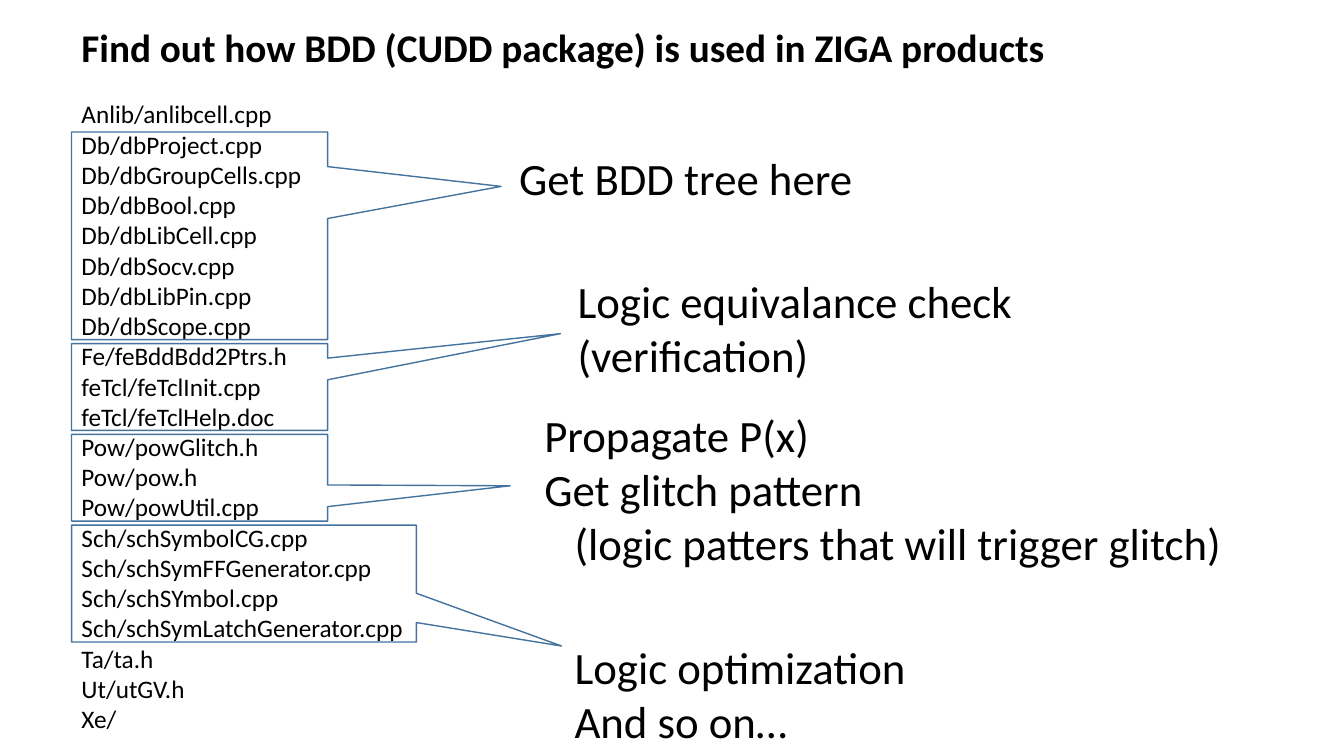
"""Build a slide linking source files to the ways they use the BDD package."""
from pptx import Presentation
from pptx import util as u
from pptx.dml.color import RGBColor
from pptx.enum import shapes, text

LEFT = 0.71
LIST_TOP = 1.01
ROW = 0.3
GAP = 0.04
INDENT = 0.3


def color(hex_string):
    return RGBColor.from_string(hex_string)


def add_text(slide, box, lines, size, bold=False):
    shape = slide.shapes.add_textbox(*[u.Inches(length) for length in box])
    frame = shape.text_frame
    frame.word_wrap = False
    frame.auto_size = text.MSO_AUTO_SIZE.SHAPE_TO_FIT_TEXT
    frame.text = "\n".join(lines)
    for paragraph in frame.paragraphs:
        paragraph.font.name = "Calibri"
        paragraph.font.size = u.Pt(size)
        paragraph.font.bold = bold
        paragraph.font.color.rgb = color("000000")
    return frame


presentation = Presentation()
presentation.slide_width = u.Inches(13.33)
presentation.slide_height = u.Inches(7.5)
slide = presentation.slides.add_slide(presentation.slide_layouts[6])

files = [
    "Anlib/anlibcell.cpp",
    "Db/dbProject.cpp",
    "Db/dbGroupCells.cpp",
    "Db/dbBool.cpp",
    "Db/dbLibCell.cpp",
    "Db/dbSocv.cpp",
    "Db/dbLibPin.cpp",
    "Db/dbScope.cpp",
    "Fe/feBddBdd2Ptrs.h",
    "feTcl/feTclInit.cpp",
    "feTcl/feTclHelp.doc",
    "Pow/powGlitch.h",
    "Pow/pow.h",
    "Pow/powUtil.cpp",
    "Sch/schSymbolCG.cpp",
    "Sch/schSymFFGenerator.cpp",
    "Sch/schSYmbol.cpp",
    "Sch/schSymLatchGenerator.cpp",
    "Ta/ta.h",
    "Ut/utGV.h",
    "Xe/",
]
add_text(slide, (LEFT, 0.18, 9.84, 0.57),
         ["Find out how BDD (CUDD package) is used in ZIGA products"], 28, bold=True)
add_text(slide, (LEFT, 0.93, 3.42, 6.77), files, 18)

# First row, row count, width, pointer tip
callouts = [
    (1, 7, 2.54, (4.97, 1.85)),
    (8, 3, 2.54, (5.56, 3.31)),
    (11, 3, 2.54, (5.06, 4.82)),
    (14, 4, 3.42, (5.57, 6.41)),
]
for first_row, rows, width, (tip_x, tip_y) in callouts:
    top = LIST_TOP + first_row * ROW
    height = rows * ROW - GAP
    callout = slide.shapes.add_shape(
        shapes.MSO_SHAPE.RECTANGULAR_CALLOUT,
        u.Inches(LEFT), u.Inches(top), u.Inches(width), u.Inches(height))
    callout.adjustments[0] = (tip_x - LEFT) / width - 0.5
    callout.adjustments[1] = (tip_y - top) / height - 0.5
    callout.shadow.inherit = False
    callout.fill.background()
    callout.line.color.rgb = color("43739E")
    callout.line.width = u.Pt(1)

add_text(slide, (5.05, 1.45, 3.54, 0.64), ["Get BDD tree here"], 32)
add_text(slide, (5.63, 2.67, 4.56, 1.18),
         ["Logic equivalance check", "(verification)"], 32)
glitch = add_text(slide, (5.3, 4, 7, 1.72),
                  ["Propagate P(x)", "Get glitch pattern",
                   "(logic patters that will trigger glitch)"], 32)
glitch_properties = glitch.paragraphs[-1]._p.get_or_add_pPr()
glitch_properties.set("marL", str(u.Inches(INDENT)))
glitch_properties.set("indent", "0")
add_text(slide, (5.6, 6.3, 3.53, 1.18), ["Logic optimization", "And so on…"], 32)

presentation.save("out.pptx")
